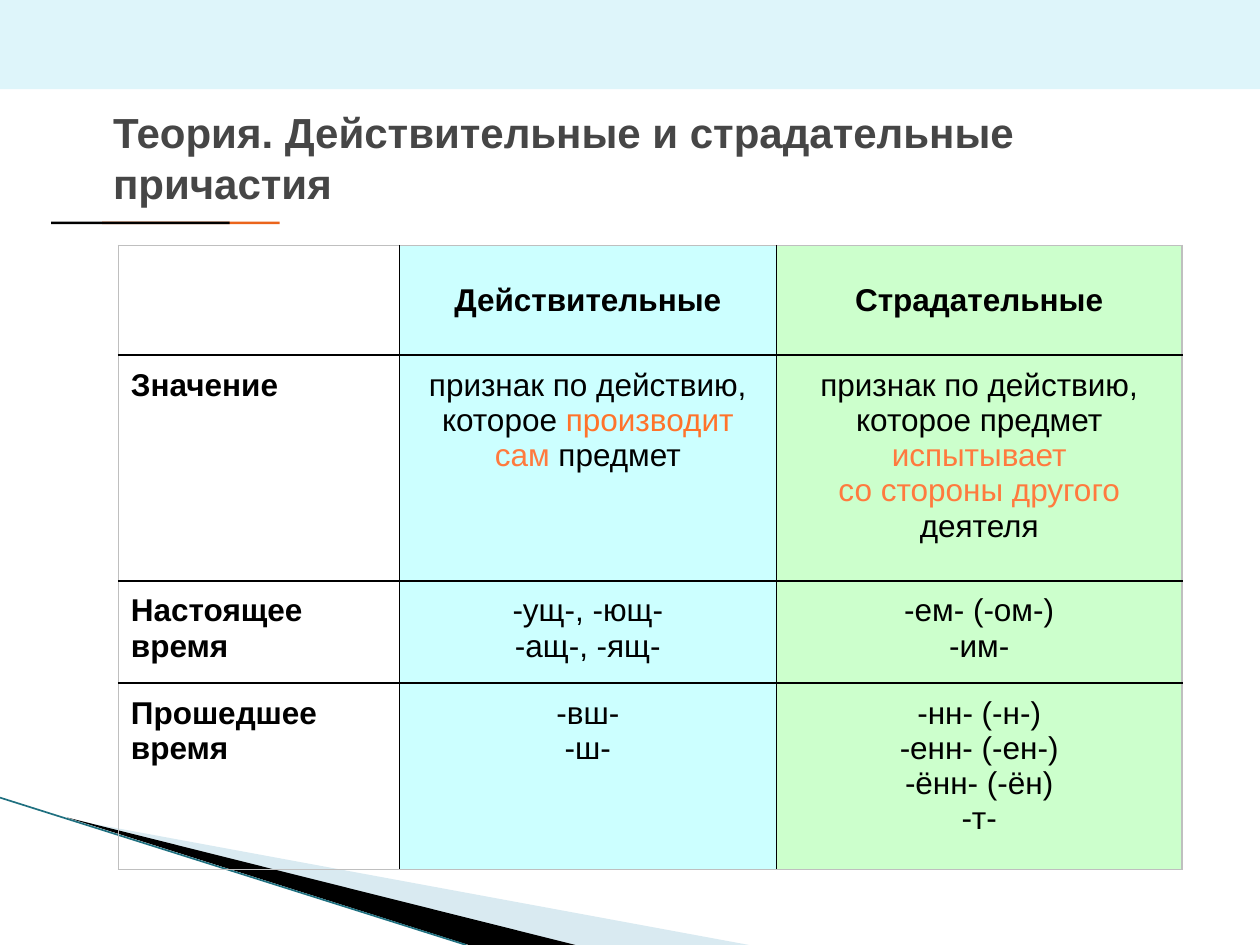
"""Build a slide comparing active and passive Russian participles in a table."""
import pptx
import pptx.dml.color
import pptx.enum.shapes
import pptx.enum.text
import pptx.oxml
import pptx.util
from pptx.util import Cm

TITLE = "Теория. Действительные и страдательные причастия"
BLACK, ORANGE, GREY = "000000", "FF7A3E", "BFBFBF"
COL_WIDTHS = [5.66, 7.6, 8.18]
ROW_HEIGHTS = [2.21, 4.55, 2.06, 3.76]
COL_FILLS = [None, "CCFFFF", "CCFFCC"]
TABLE_LEFT, TABLE_TOP = 2.39, 4.95
INSET = 0.25
ROWS = [
    ["", "Действительные", "Страдательные"],
    ["Значение",
     [[("признак по действию, которое ", BLACK), ("производит ", "FF732B"),
       ("сам", ORANGE), (" предмет", BLACK)]],
     [[("признак по действию, которое предмет ", BLACK), ("испытывает", ORANGE)],
      [("со стороны другого ", ORANGE), ("деятеля", BLACK)]]],
    ["Настоящее время", "-ущ-, -ющ-\n-ащ-, -ящ-", "-ем- (-ом-)\n-им-"],
    ["Прошедшее время", "-вш-\n-ш-", "-нн- (-н-)\n-енн- (-ен-)\n-ённ- (-ён)\n-т-"],
]
WEDGES = [
    ([(1.4, 16.52), (15.1, 19.05), (11.58, 19.05)], "D9EAF1"),
    ([(1.35, 16.48), (11.6, 19.05), (9.45, 19.05)], BLACK),
]
BARS = [
    (0, 0, 25.4, 1.8, "DEF5FA"),
    (2.06, 4.47, 3.58, 0.05, "EB641B"),
    (1.03, 4.47, 3.6, 0.05, BLACK),
]


def rgb(color):
    return pptx.dml.color.RGBColor.from_string(color)


def paint(sp, color):
    sp.fill.solid()
    sp.fill.fore_color.rgb = rgb(color)
    sp.line.fill.background()
    sp.shadow.inherit = False


def set_insets(box):
    box.margin_left = box.margin_right = Cm(INSET)
    box.margin_top = box.margin_bottom = Cm(INSET)


def set_font(p, size, bold, color=None):
    p.font.name = "Arial"
    p.font.size = pptx.util.Pt(size)
    p.font.bold = bold
    if color:
        p.font.color.rgb = rgb(color)


def set_borders(cell, colors):
    tcPr = cell._tc.get_or_add_tcPr()
    for i, (side, color) in enumerate(zip("LRTB", colors)):
        tcPr.insert(i, pptx.oxml.parse_xml(
            f'<a:ln{side} xmlns:a="http://schemas.openxmlformats.org/drawingml/2006/main"'
            f' w="12700"><a:solidFill><a:srgbClr val="{color}"/></a:solidFill></a:ln{side}>'))


def fill_cell(cell, content, row, col):
    set_insets(cell)
    if row == 0:
        cell.vertical_anchor = pptx.enum.text.MSO_ANCHOR.MIDDLE
    if COL_FILLS[col]:
        cell.fill.solid()
        cell.fill.fore_color.rgb = rgb(COL_FILLS[col])
    else:
        cell.fill.background()
    edges = [col == 0, col == len(COL_WIDTHS) - 1, row == 0, row == len(ROWS) - 1]
    set_borders(cell, [GREY if edge else BLACK for edge in edges])
    if isinstance(content, str):
        content = [[(line, BLACK)] for line in content.split("\n")]
    tf = cell.text_frame
    for i, runs in enumerate(content):
        p = tf.add_paragraph() if i else tf.paragraphs[0]
        set_font(p, 18, row == 0 or col == 0)
        if col:
            p.alignment = pptx.enum.text.PP_ALIGN.CENTER
        for text, color in runs:
            if text:
                r = p.add_run()
                r.text = text
                r.font.color.rgb = rgb(color)


def add_background(s):
    for points, color in WEDGES:
        (x, y), *rest = [(Cm(a), Cm(b)) for a, b in points]
        builder = s.shapes.build_freeform(x, y)
        builder.add_line_segments(rest)
        paint(builder.convert_to_shape(), color)
    line = s.shapes.add_connector(pptx.enum.shapes.MSO_CONNECTOR.STRAIGHT,
                                  Cm(0), Cm(16.08), Cm(9.4), Cm(19.05))
    line.line.color.rgb = rgb("1F7080")
    line.line.width = pptx.util.Pt(0.95)
    line._element.spPr.append(pptx.oxml.parse_xml(
        '<a:effectLst xmlns:a="http://schemas.openxmlformats.org/drawingml/2006/main"/>'))
    for x, y, w, h, color in BARS:
        sp = s.shapes.add_shape(pptx.enum.shapes.MSO_SHAPE.RECTANGLE,
                                Cm(x), Cm(y), Cm(w), Cm(h))
        paint(sp, color)


def add_title(s):
    tf = s.shapes.add_textbox(Cm(2.03), Cm(1.9), Cm(21.36), Cm(1.98)).text_frame
    tf.word_wrap = True
    set_insets(tf)
    p = tf.paragraphs[0]
    p.text = TITLE
    set_font(p, 24, True, "464646")


def add_participle_table(s):
    frame = s.shapes.add_table(len(ROWS), len(COL_WIDTHS), Cm(TABLE_LEFT), Cm(TABLE_TOP),
                               Cm(sum(COL_WIDTHS)), Cm(sum(ROW_HEIGHTS)))
    table = frame.table
    table.first_row = table.horz_banding = False
    for column, width in zip(table.columns, COL_WIDTHS):
        column.width = Cm(width)
    for i, (height, contents) in enumerate(zip(ROW_HEIGHTS, ROWS)):
        table.rows[i].height = Cm(height)
        for j, content in enumerate(contents):
            fill_cell(table.cell(i, j), content, i, j)


def main():
    prs = pptx.Presentation()
    prs.slide_width, prs.slide_height = Cm(25.4), Cm(19.05)
    s = prs.slides.add_slide(prs.slide_layouts[6])
    add_background(s)
    add_title(s)
    add_participle_table(s)
    prs.save("out.pptx")


if __name__ == "__main__":
    main()
